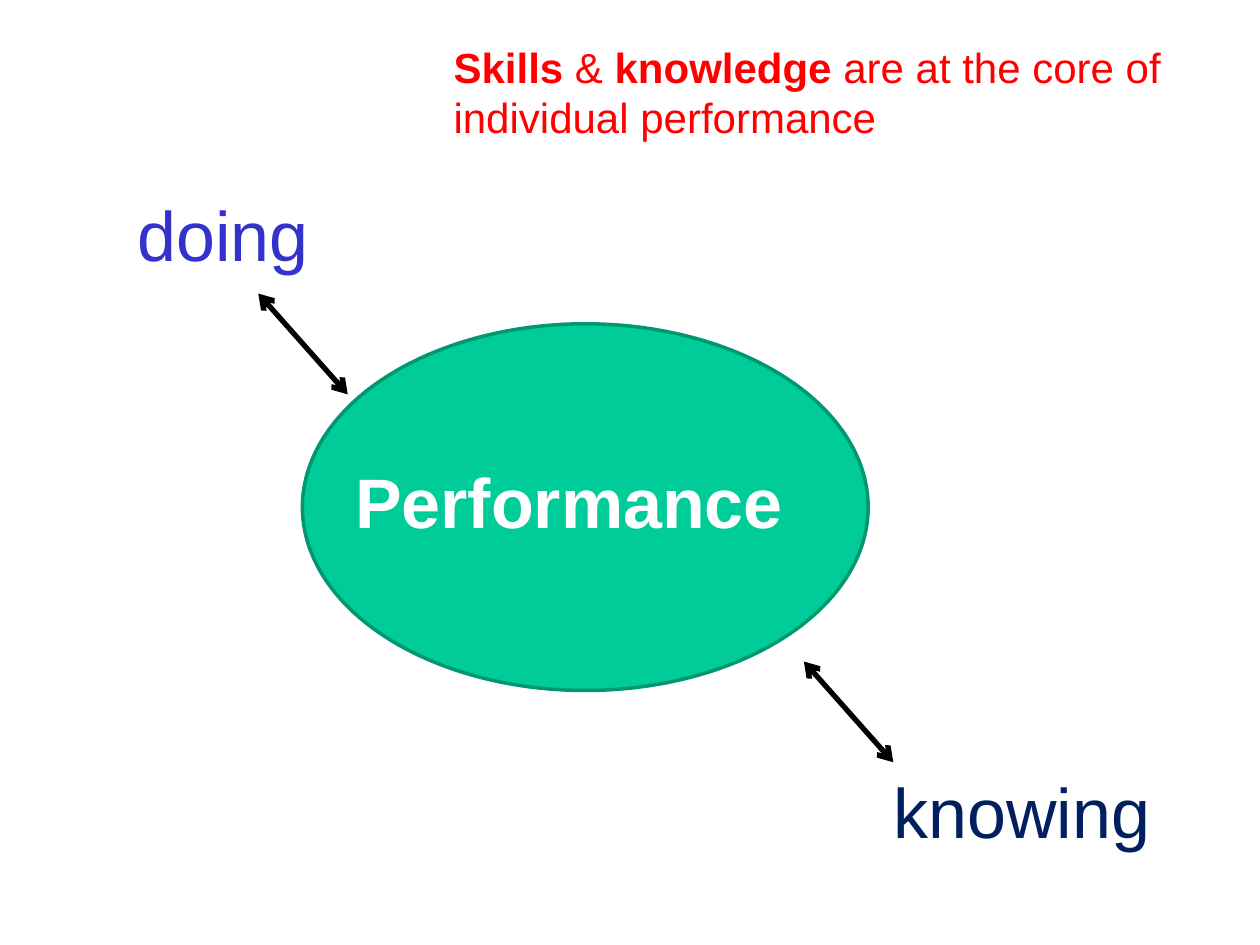
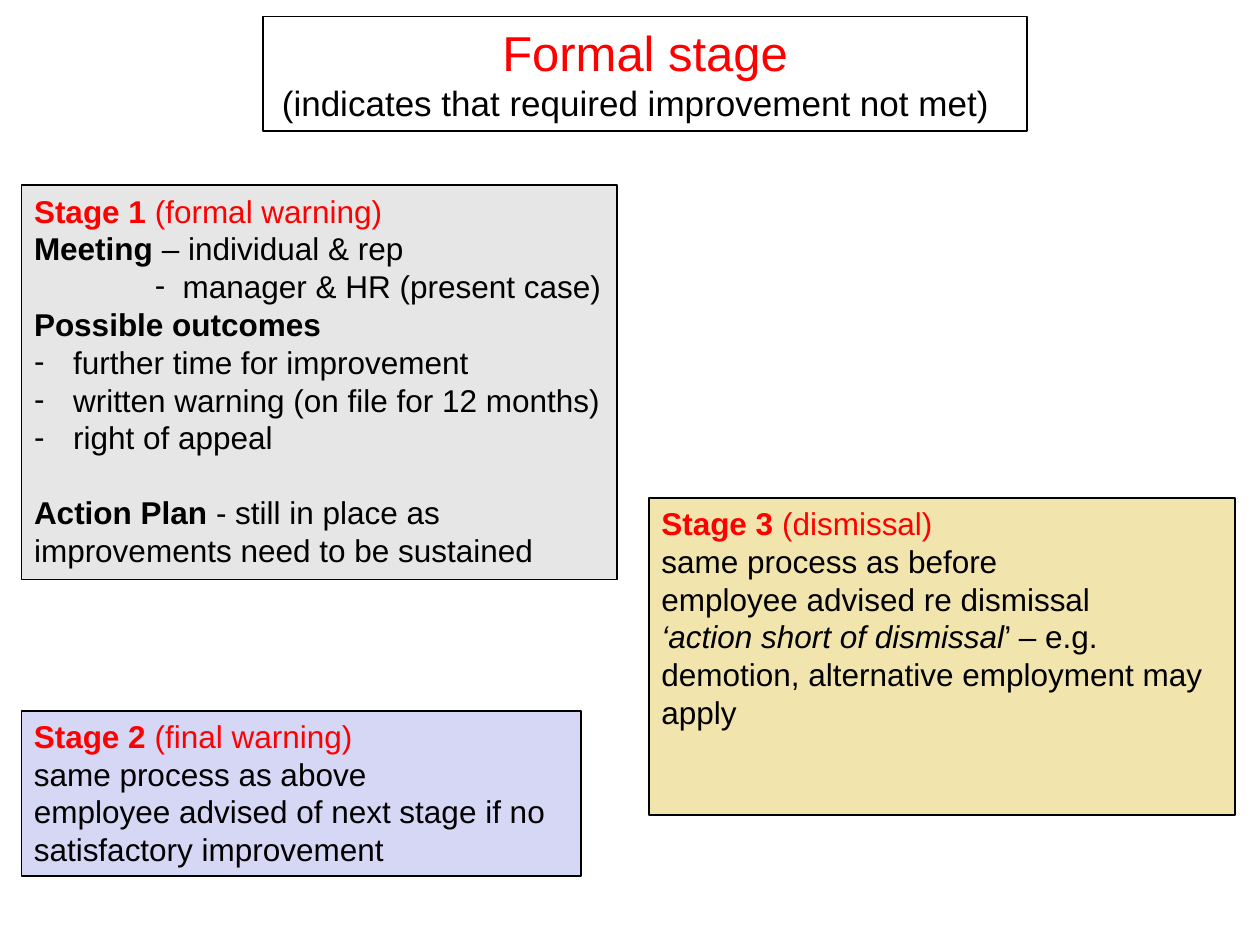
import dataclasses

import pptx
import pptx.dml.color
import pptx.enum.shapes
import pptx.enum.text
import pptx.oxml
import pptx.oxml.ns
import pptx.util

Align = pptx.enum.text.PP_ALIGN
Shape = pptx.enum.shapes.MSO_SHAPE
Inches, Pt = pptx.util.Inches, pptx.util.Pt
qn = pptx.oxml.ns.qn


@dataclasses.dataclass(frozen=True)
class Theme:
    font: str = "Arial"
    # Colours
    black: str = "000000"
    white: str = "FFFFFF"
    red: str = "FF0000"
    blue: str = "3333CC"
    navy: str = "002060"
    green: str = "00CC99"
    rim: str = "009771"
    grey: str = "E6E6E6"
    lilac: str = "D6D6F5"
    sand: str = "F1E4AD"
    # Type sizes
    label: int = 40
    head: int = 28
    lead: int = 24
    sub: int = 20
    body: int = 18


@dataclasses.dataclass
class Para:
    """Runs are (text, style) pairs; style may hold b (bold) and i (italic)."""
    runs: list
    size: int
    color: str
    align: object = Align.LEFT
    gap: int = 0
    dash: tuple = None  # text indent and hanging width, in inches
    right: float = 0


class Deck:
    """Draws on a grid of 100 columns by 75 rows."""

    def __init__(self, theme):
        self.theme = theme
        self.prs = pptx.Presentation()
        self.prs.slide_width, self.prs.slide_height = Inches(10), Inches(7.5)
        self.cell = self.prs.slide_width / 100

    def start(self, layout):
        self.slide = self.prs.slides.add_slide(self.prs.slide_layouts[layout])

    def span(self, *cells):
        return [round(n * self.cell) for n in cells]

    def rgb(self, color):
        return pptx.dml.color.RGBColor.from_string(color)

    def paint(self, shape, fill=None, line=None, width=1):
        if fill:
            shape.fill.solid()
            shape.fill.fore_color.rgb = self.rgb(fill)
        if line:
            shape.line.color.rgb = self.rgb(line)
            shape.line.width = Pt(width)

    def typeset(self, shape, paras):
        frame = shape.text_frame
        frame.word_wrap = True
        frame.auto_size = pptx.enum.text.MSO_AUTO_SIZE.NONE
        frame.vertical_anchor = pptx.enum.text.MSO_ANCHOR.TOP
        for i, para in enumerate(paras):
            line = frame.add_paragraph() if i else frame.paragraphs[0]
            self.set_line(line, para)

    def set_line(self, line, para):
        line.text = para.runs[0][0]
        for text, _ in para.runs[1:]:
            line.add_run().text = text
        line.alignment = para.align
        line.line_spacing = 1.0
        line.space_before, line.space_after = Pt(para.gap), Pt(0)
        for run, (_, style) in zip(line.runs, para.runs):
            font = run.font
            font.name, font.size = self.theme.font, Pt(para.size)
            font.color.rgb = self.rgb(para.color)
            font.bold, font.italic = "b" in style, "i" in style
        # Indents and bullets
        left, hang = para.dash or (0, 0)
        props = line._p.get_or_add_pPr()
        for name, size in (("marL", left), ("marR", para.right), ("indent", -hang)):
            props.set(name, str(Inches(size)))
        if para.dash:
            self.tag(props, "a:buFont", typeface=self.theme.font)
            self.tag(props, "a:buChar", char="-")
        else:
            self.tag(props, "a:buNone")

    def tag(self, parent, name, **attrs):
        node = pptx.oxml.parse_xml(f"<{name} {pptx.oxml.ns.nsdecls('a')}/>")
        for key, value in attrs.items():
            node.set(key, value)
        parent.append(node)

    def holder(self, index, box, paras, **look):
        shape = self.slide.placeholders[index]
        shape.left, shape.top, shape.width, shape.height = self.span(*box)
        self.paint(shape, **look)
        self.typeset(shape, paras)

    def label(self, box, para):
        self.typeset(self.slide.shapes.add_textbox(*self.span(*box)), [para])

    def shape(self, kind, box, paras=(), **look):
        shape = self.slide.shapes.add_shape(kind, *self.span(*box))
        shape.shadow.inherit = False
        self.paint(shape, **look)
        if paras:
            self.typeset(shape, paras)

    def arrow(self, x, y, dx, dy):
        link = self.slide.shapes.add_connector(
            pptx.enum.shapes.MSO_CONNECTOR.STRAIGHT, *self.span(x, y, x + dx, y + dy))
        link.line.color.rgb = self.rgb(self.theme.black)
        link.line.width = Pt(3)
        props = link.element.spPr
        for end in ("a:headEnd", "a:tailEnd"):
            self.tag(props.find(qn("a:ln")), end, type="arrow")
        self.tag(props, "a:effectLst")


def core(deck):
    """Performance between doing and knowing."""
    t = deck.theme
    deck.start(5)
    deck.holder(0, (35, 2.8, 59.8, 9.1), [Para(
        [("Skills", "b"), (" & ", ""), ("knowledge", "b"),
         (" are at the core of individual performance", "")], t.lead, t.red)])

    deck.shape(Shape.OVAL, (24, 25.7, 44.9, 29.1), fill=t.green, line=t.rim, width=2)
    deck.label((27.2, 35.9, 40.2, 7.7), Para([("Performance", "b")], t.label, t.white))

    for text, color, x, y in (("doing", t.blue, 3.9, 14.7), ("knowing", t.navy, 67.3, 60.5)):
        deck.label((x, y, 27.6, 7.7), Para([(text, "")], t.label, color, Align.CENTER))
    for x, y in ((20.5, 23.3), (63.8, 52.5)):
        deck.arrow(x, y, 7.1, 8)


def formal(deck):
    """The three formal stages."""
    t = deck.theme
    deck.start(1)

    def head(stage, note):
        return Para([(stage, "b"), (note, "")], t.body, t.red)

    def text(*runs, **look):
        return Para(list(runs), t.body, t.black, **look)

    def plain(*lines, **look):
        return [text((line, ""), **look) for line in lines]

    deck.holder(0, (20.9, 1.3, 60.6, 9.1), [
        Para([("Formal stage", "")], t.head, t.red, Align.CENTER),
        Para([("(indicates that required improvement not met)", "")],
             t.sub, t.black, Align.CENTER, right=0.15),
    ], line=t.black)

    # Stage 1
    deck.holder(1, (1.7, 14.7, 47.3, 31.3), [
        head("Stage 1", " (formal warning)"),
        text(("Meeting", "b"), (" – individual & rep", "")),
        *plain("manager & HR (present case)", dash=(1.18, 0.22)),
        text(("Possible outcomes", "b")),
        *plain("further time for improvement", "written warning (on file for 12 months)",
               "right of appeal", dash=(0.31, 0.31)),
        text(("Action Plan ", "b"),
             ("- still in place as improvements need to be sustained", ""), gap=21),
    ], fill=t.grey, line=t.black)

    # Stages 2 and 3
    deck.shape(Shape.RECTANGLE, (1.7, 56.4, 44.4, 13.1), [
        head("Stage 2", " (final warning)"),
        *plain("same process as above",
               "employee advised of next stage if no satisfactory improvement"),
    ], fill=t.lilac, line=t.black)
    deck.shape(Shape.RECTANGLE, (51.5, 39.5, 46.5, 25.2), [
        head("Stage 3", " (dismissal)"),
        *plain("same process as before", "employee advised re dismissal"),
        text(("‘action short of dismissal", "i"),
             ("’ – e.g. demotion, alternative employment may apply", "")),
    ], fill=t.sand, line=t.black)


def main():
    deck = Deck(Theme())
    core(deck)
    formal(deck)
    deck.prs.save("out.pptx")


if __name__ == "__main__":
    main()
